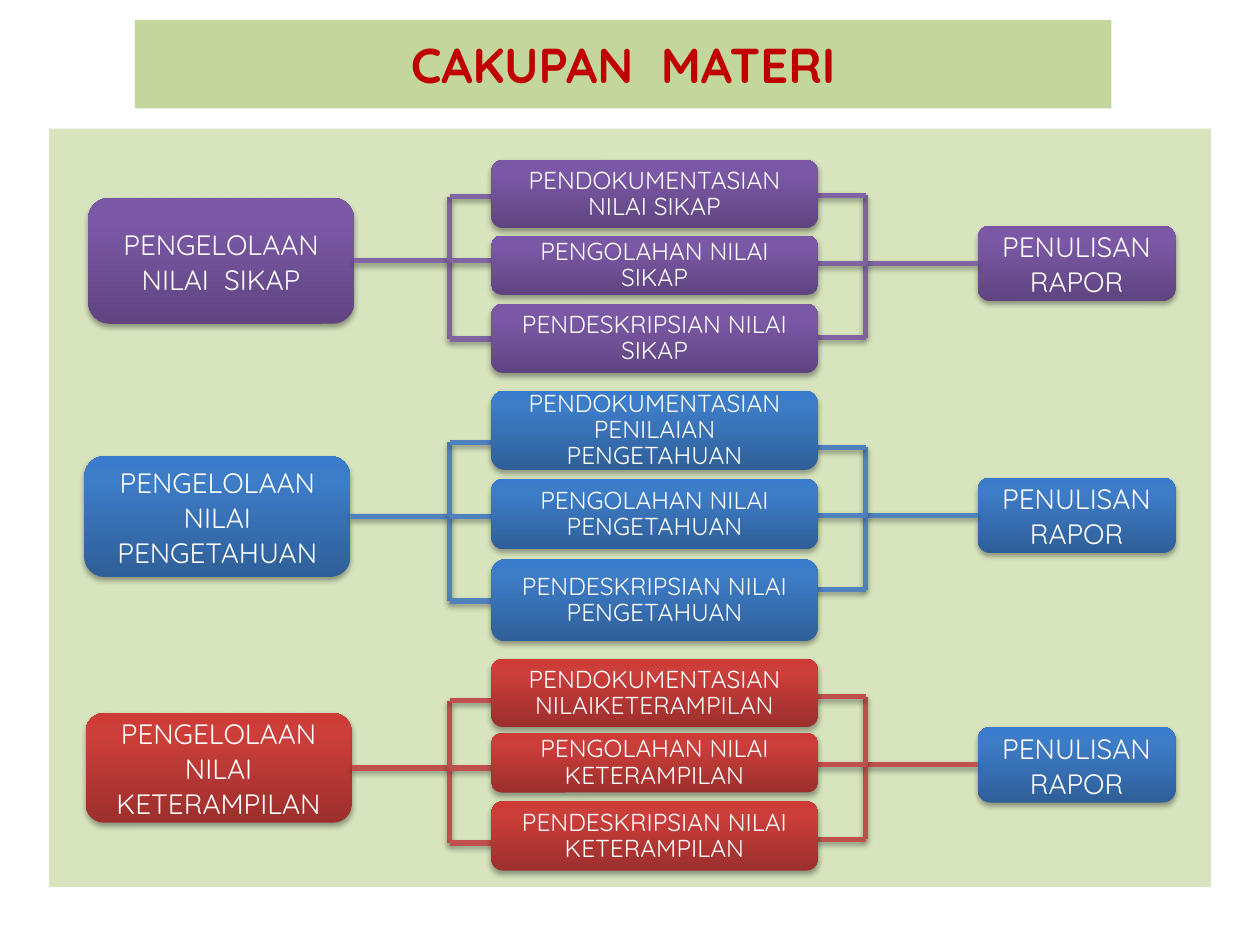
from copy import deepcopy

from lxml import etree
from pptx import Presentation
from pptx import util as u
from pptx.dml.color import RGBColor
from pptx.enum import shapes, text
from pptx.oxml import ns

FONT = "Quicksand"
TITLE = "CAKUPAN  MATERI"
PANEL = (0.39, 1.02, 9.22, 6.02)
TITLE_BOX = (1.07, 0.16, 7.75, 0.7)

# Line colour, then gradient from bottom to top
PURPLE = ("8064A2", ("5F4480", "7B58A6", "7C57A8"))
BLUE = ("4F81BD", ("2F5F99", "3D7CC7", "3A7CCB"))
RED = ("C0504D", ("9C2F2D", "CB3E3A", "CE3B37"))
STOPS = (0, 0.8, 1)

# Columns as (left, width); the brackets stand between them
STEP_COLUMN = (3.9, 2.59)
REPORT_COLUMN = (7.76, 1.57)
SOURCE_WIDTH = 2.11
LEFT_BRACKET, RIGHT_BRACKET = 3.57, 6.87
STEP_OVERLAP = 0.29
REPORT_HEIGHT = 0.6

# source: text, left, top, height; steps: text, top, height
# brackets: top and bottom of the left and the right one
TOPICS = [
    dict(palette=PURPLE, report_palette=PURPLE, report_top=1.79,
         source=("PENGELOLAAN NILAI  SIKAP", 0.7, 1.57, 1.0),
         brackets=((1.56, 2.69), (1.55, 2.68)),
         steps=[("PENDOKUMENTASIAN NILAI SIKAP", 1.27, 0.54),
                ("PENGOLAHAN NILAI SIKAP", 1.87, 0.47),
                ("PENDESKRIPSIAN NILAI SIKAP", 2.41, 0.55)]),
    dict(palette=BLUE, report_palette=BLUE, report_top=3.79,
         source=("PENGELOLAAN NILAI PENGETAHUAN", 0.67, 3.62, 0.96),
         brackets=((3.51, 4.77), (3.55, 4.68)),
         steps=[("PENDOKUMENTASIAN PENILAIAN PENGETAHUAN", 3.1, 0.63),
                ("PENGOLAHAN NILAI PENGETAHUAN", 3.8, 0.56),
                ("PENDESKRIPSIAN NILAI PENGETAHUAN", 4.44, 0.65)]),
    dict(palette=RED, report_palette=BLUE, report_top=5.77,
         source=("PENGELOLAAN NILAI KETERAMPILAN", 0.68, 5.66, 0.87),
         brackets=((5.56, 6.69), (5.53, 6.66)),
         steps=[("PENDOKUMENTASIAN NILAIKETERAMPILAN", 5.23, 0.54),
                ("PENGOLAHAN NILAI KETERAMPILAN", 5.82, 0.47),
                ("PENDESKRIPSIAN NILAI KETERAMPILAN", 6.36, 0.55)]),
]


def rgb(value):
    return RGBColor.from_string(value)


def inches(values):
    return [u.Inches(value) for value in values]


def add_shadow(shape):
    properties = shape._element.spPr
    effects = properties.find(ns.qn("a:effectLst"))
    if effects is None:
        effects = etree.SubElement(properties, ns.qn("a:effectLst"))
    shadow = etree.SubElement(effects, ns.qn("a:outerShdw"), blurRad="40000",
                              dist="23000", dir="5400000", rotWithShape="0")
    color = etree.SubElement(shadow, ns.qn("a:srgbClr"), val="000000")
    etree.SubElement(color, ns.qn("a:alpha"), val="35000")


def write(shape, wording, size, color, bold=False, spacing=None):
    frame = shape.text_frame
    frame.text = wording
    frame.word_wrap = True
    frame.vertical_anchor = text.MSO_ANCHOR.MIDDLE
    paragraph = frame.paragraphs[0]
    paragraph.alignment = text.PP_ALIGN.CENTER
    if spacing:
        paragraph.line_spacing = u.Pt(spacing)
    font = paragraph.font
    font.name, font.size, font.bold = FONT, u.Pt(size), bold
    font.color.rgb = rgb(color)


def add_box(slide, wording, place, palette, size, spacing):
    shape = slide.shapes.add_shape(shapes.MSO_SHAPE.ROUNDED_RECTANGLE, *inches(place))
    shape.fill.gradient()
    shape.fill.gradient_angle = 90
    stop_list = shape._element.spPr.find(".//" + ns.qn("a:gsLst"))
    stop_list.append(deepcopy(stop_list[0]))
    for stop, position, color in zip(shape.fill.gradient_stops, STOPS, palette[1]):
        stop.position = position
        stop.color.rgb = rgb(color)
    shape.line.fill.background()
    shape.shadow.inherit = False
    add_shadow(shape)
    write(shape, wording, size, "FFFFFF", spacing=spacing)
    return shape


def add_line(slide, start, end, color):
    line = slide.shapes.add_connector(shapes.MSO_CONNECTOR.STRAIGHT, *inches(start + end))
    line.line.color.rgb = rgb(color)
    line.line.width = u.Pt(3)
    add_shadow(line)
    return line


def add_bracket(slide, box, site, trunk, step_end, span, color):
    """Join a side box to a vertical trunk with three arms towards the steps."""
    middle = u.Emu(box.top + box.height // 2).inches
    stem = add_line(slide, (trunk, middle), (trunk, middle), color)
    stem.begin_connect(box, site)
    add_line(slide, (trunk, span[0]), (trunk, span[1]), color)
    for y in (span[0], middle, span[1]):
        add_line(slide, (trunk, y), (step_end, y), color)


def add_topic(slide, topic):
    palette = topic["palette"]
    wording, left, top, height = topic["source"]
    source = add_box(slide, wording, (left, top, SOURCE_WIDTH, height), palette, 16, 20)
    report_left, report_width = REPORT_COLUMN
    report = add_box(slide, "PENULISAN RAPOR",
                     (report_left, topic["report_top"], report_width, REPORT_HEIGHT),
                     topic["report_palette"], 16, 20)
    step_left, step_width = STEP_COLUMN
    left_span, right_span = topic["brackets"]
    add_bracket(slide, source, 3, LEFT_BRACKET, step_left + STEP_OVERLAP,
                left_span, palette[0])
    add_bracket(slide, report, 1, RIGHT_BRACKET, step_left + step_width - STEP_OVERLAP,
                right_span, palette[0])
    for wording, top, height in topic["steps"]:
        add_box(slide, wording, (step_left, top, step_width, height), palette, 14, 15)


def main():
    presentation = Presentation()
    presentation.slide_width, presentation.slide_height = inches((10, 7.5))
    slide = presentation.slides.add_slide(presentation.slide_layouts[5])

    title = slide.shapes.title
    title.left, title.top, title.width, title.height = inches(TITLE_BOX)
    title.fill.solid()
    title.fill.fore_color.rgb = rgb("C3D69B")
    write(title, TITLE, 28, "C00000", bold=True)

    panel = slide.shapes.add_shape(shapes.MSO_SHAPE.RECTANGLE, *inches(PANEL))
    panel.fill.solid()
    panel.fill.fore_color.rgb = rgb("D7E4BD")
    panel.line.fill.background()
    panel.shadow.inherit = False

    for topic in TOPICS:
        add_topic(slide, topic)
    presentation.save("out.pptx")


if __name__ == "__main__":
    main()
